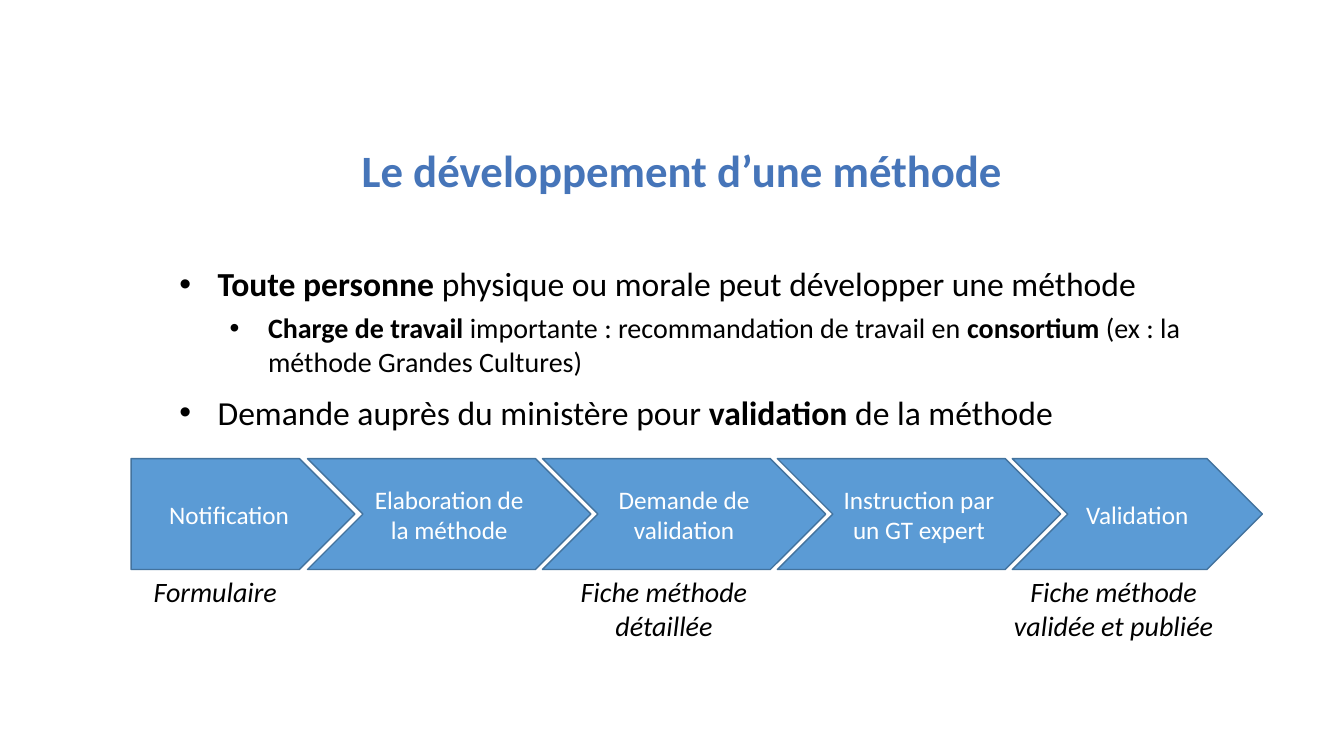
from lxml import etree
from pptx import Presentation
from pptx.dml.color import RGBColor
from pptx.enum import shapes, text
from pptx.oxml import ns
from pptx.util import Inches, Pt


def tint(code):
    return RGBColor.from_string(code)


class Page:
    face = "Calibri"
    blue, edge, head = "5B9BD5", "43739E", "4675B9"
    black, white = "000000", "FFFFFF"

    def __init__(self, deck):
        self.slide = deck.slides.add_slide(deck.slide_layouts[6])

    def style(self, run, size, color, bold=False, slant=False):
        font = run.font
        font.name, font.size = self.face, Pt(size)
        font.bold, font.italic = bold, slant
        font.color.rgb = tint(color)

    def box(self, left, top, width, height):
        area = [Inches(v) for v in (left, top, width, height)]
        frame = self.slide.shapes.add_textbox(*area).text_frame
        frame.word_wrap = True
        return frame

    def title(self, frame, words):
        para = frame.paragraphs[0]
        para.text = words
        para.alignment = text.PP_ALIGN.CENTER
        para.line_spacing = 0.9
        self.style(para.runs[0], 32, self.head, bold=True)

    def bullet(self, frame, words, level, size, gap):
        para = frame.add_paragraph()
        para.level = level
        para.space_before = Pt(gap)
        props = para._p.get_or_add_pPr()
        props.set("marL", str(Inches(0.75 + 0.5 * level)))
        props.set("indent", str(Inches(-0.38)))
        etree.SubElement(props, ns.qn("a:buFont")).set("typeface", "Arial")
        etree.SubElement(props, ns.qn("a:buChar")).set("char", "•")
        for i, part in enumerate(words.split("**")):
            if part:
                run = para.add_run()
                run.text = part
                self.style(run, size, self.black, bold=i % 2 == 1)

    def step(self, kind, left, width, words):
        area = [Inches(v) for v in (left, 4.55, width, 1.1)]
        shape = self.slide.shapes.add_shape(kind, *area)
        shape.shadow.inherit = False
        shape.fill.solid()
        shape.fill.fore_color.rgb = tint(self.blue)
        shape.line.color.rgb = tint(self.edge)
        shape.line.width = Pt(1)
        frame = shape.text_frame
        frame.word_wrap = True
        frame.vertical_anchor = text.MSO_ANCHOR.MIDDLE
        para = frame.paragraphs[0]
        para.text = words
        para.alignment = text.PP_ALIGN.CENTER
        self.style(para.runs[0], 18, self.white)

    def label(self, left, width, height, words):
        frame = self.box(left, 5.65, width, height)
        frame.auto_size = text.MSO_AUTO_SIZE.SHAPE_TO_FIT_TEXT
        para = frame.paragraphs[0]
        para.text = words
        para.alignment = text.PP_ALIGN.CENTER
        self.style(para.runs[0], 20, self.black, slant=True)


def main():
    deck = Presentation()
    deck.slide_width, deck.slide_height = Inches(13.33), Inches(7.5)
    page = Page(deck)

    body = page.box(1.31, 1.43, 10.91, 5.66)
    page.title(body, "Le développement d’une méthode")
    for words, level, size, gap in (
        ("**Toute personne **physique ou morale peut développer une méthode", 0, 24, 47),
        ("**Charge de travail** importante : recommandation de travail en "
         "**consortium** (ex : la méthode Grandes Cultures)", 1, 20, 5),
        ("Demande auprès du ministère pour **validation** de la méthode", 0, 24, 10),
    ):
        page.bullet(body, words, level, size, gap)

    kinds = shapes.MSO_SHAPE
    page.step(kinds.PENTAGON, 1.3, 2.22, "Notification")
    steps = (
        ("Elaboration de la méthode", 2.81),
        ("Demande de validation", 2.81),
        ("Instruction par un GT expert", 2.81),
        ("Validation", 2.48),
    )
    for i, (words, width) in enumerate(steps):
        page.step(kinds.CHEVRON, 3.05 + 2.33 * i, width, words)

    page.label(1.14, 1.99, 0.44, "Formulaire")
    page.label(5.59, 1.99, 0.77, "Fiche méthode détaillée")
    page.label(9.89, 2.31, 0.77, "Fiche méthode validée et publiée")
    deck.save("out.pptx")


if __name__ == "__main__":
    main()
